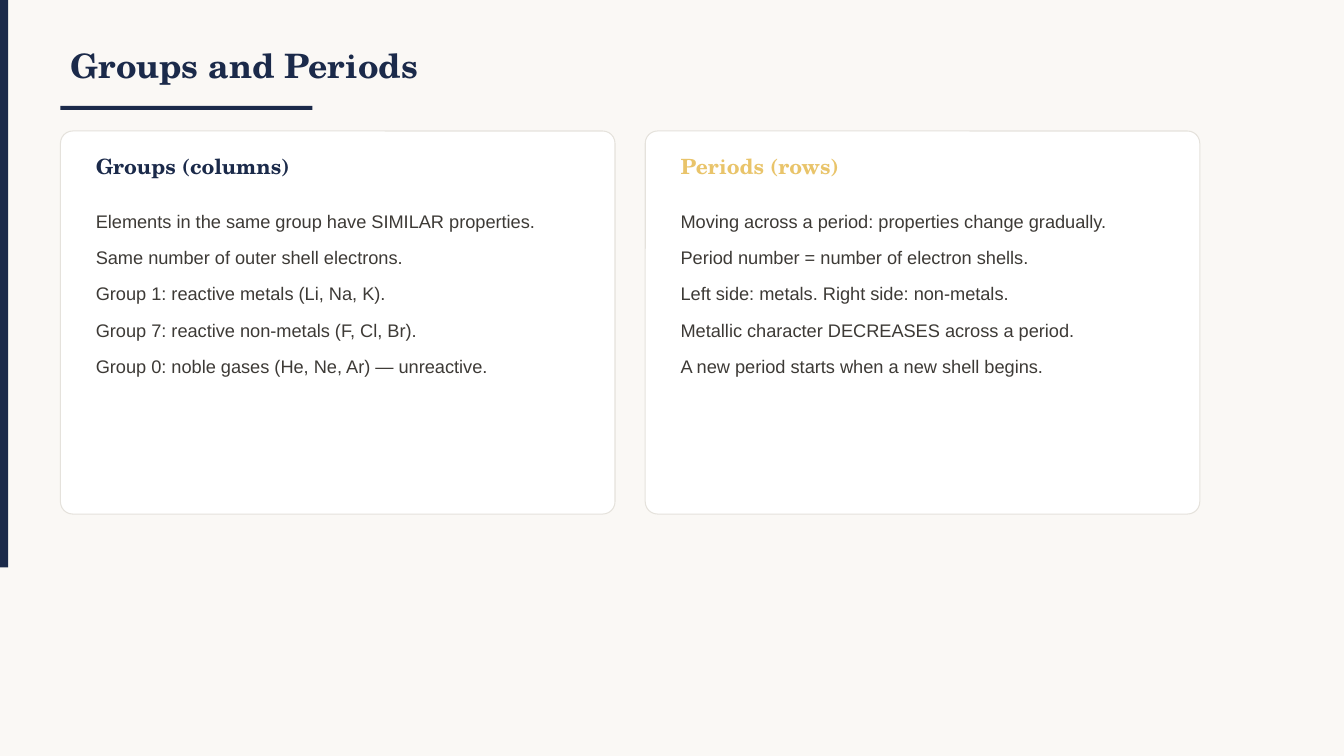
"""Build the Groups and Periods slide with two comparison cards."""
from lxml.etree import SubElement
from pptx import Presentation
from pptx.dml.color import RGBColor
from pptx.enum.shapes import MSO_SHAPE
from pptx.enum.text import MSO_ANCHOR, MSO_AUTO_SIZE, PP_ALIGN
from pptx.oxml.ns import qn
from pptx.util import Inches, Pt

NAVY, GOLD, INK = "1B2A4A", "E9C46A", "3D3A36"
PAPER, WHITE, BORDER = "FAF8F5", "FFFFFF", "E5E2DC"
SERIF, SANS = "TeX Gyre Schola", "Arial"


def add_panel(kind, left, top, width, height, color):
    panel = slide.shapes.add_shape(
        kind, Inches(left), Inches(top), Inches(width), Inches(height))
    panel.shadow.inherit = False
    panel.fill.solid()
    panel.fill.fore_color.rgb = RGBColor.from_string(color)
    panel.line.fill.background()
    slide.shapes._spTree.insert(2, panel._element)
    return panel


def fill_placeholder(index, box, lines, font, size, color, bold, anchor):
    holder = slide.placeholders[index]
    holder.left, holder.top, holder.width, holder.height = map(Inches, box)
    frame = holder.text_frame
    frame.text = "\n".join(lines)
    frame.word_wrap = True
    frame.auto_size = MSO_AUTO_SIZE.NONE
    frame.vertical_anchor = anchor
    for paragraph in frame.paragraphs:
        properties = paragraph._p.get_or_add_pPr()
        properties.set("marL", "0")
        properties.set("indent", "0")
        SubElement(properties, qn("a:buNone"))
        paragraph.alignment = PP_ALIGN.LEFT
        paragraph.space_before = Pt(0)
        paragraph.font.name = font
        paragraph.font.size = Pt(size)
        paragraph.font.bold = bold
        paragraph.font.color.rgb = RGBColor.from_string(color)
    return frame


presentation = Presentation()
presentation.slide_width = Inches(13.33)
presentation.slide_height = Inches(7.5)
slide = presentation.slides.add_slide(
    presentation.slide_layouts.get_by_name("Comparison"))
slide.background.fill.solid()
slide.background.fill.fore_color.rgb = RGBColor.from_string(PAPER)

add_panel(MSO_SHAPE.RECTANGLE, 0, 0, 0.08, 5.63, NAVY)
add_panel(MSO_SHAPE.RECTANGLE, 0.6, 1.05, 2.5, 0.04, NAVY)
fill_placeholder(0, (0.6, 0.3, 10, 0.7), ["Groups and Periods"],
                 SERIF, 24, NAVY, True, MSO_ANCHOR.MIDDLE)

topics = [
    ("Groups (columns)", NAVY, [
        "Elements in the same group have SIMILAR properties.",
        "Same number of outer shell electrons.",
        "Group 1: reactive metals (Li, Na, K).",
        "Group 7: reactive non-metals (F, Cl, Br).",
        "Group 0: noble gases (He, Ne, Ar) — unreactive.",
    ]),
    ("Periods (rows)", GOLD, [
        "Moving across a period: properties change gradually.",
        "Period number = number of electron shells.",
        "Left side: metals. Right side: non-metals.",
        "Metallic character DECREASES across a period.",
        "A new period starts when a new shell begins.",
    ]),
]
for column, (heading, accent, facts) in enumerate(topics):
    card_left = 0.6 + 5.8 * column
    text_left = card_left + 0.25
    card = add_panel(MSO_SHAPE.ROUNDED_RECTANGLE, card_left, 1.3, 5.5, 3.8, WHITE)
    card.adjustments[0] = 0.032
    card.line.color.rgb = RGBColor.from_string(BORDER)
    card.line.width = Pt(0.75)
    fill_placeholder(1 + 2 * column, (text_left, 1.45, 5, 0.4), [heading],
                     SERIF, 15, accent, True, MSO_ANCHOR.MIDDLE)
    fact_frame = fill_placeholder(2 + 2 * column, (text_left, 1.95, 5, 2.9), facts,
                                  SANS, 13, INK, False, MSO_ANCHOR.TOP)
    for paragraph in fact_frame.paragraphs:
        paragraph.line_spacing = 1.4
        paragraph.space_after = Pt(4)

presentation.save("out.pptx")
